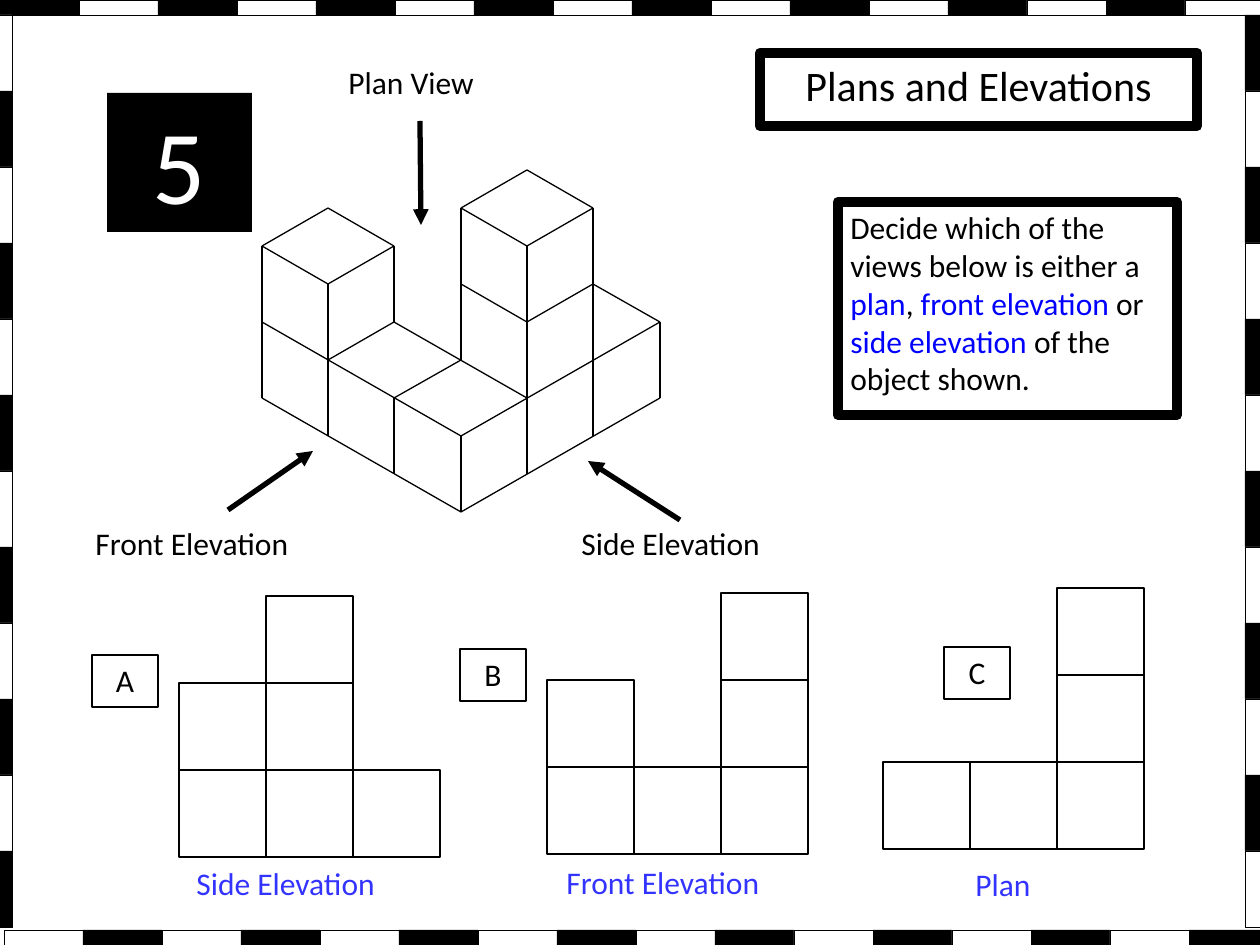
"""Builds a worksheet slide on plans and elevations of a solid made of cubes."""
import lxml.etree
import pptx
import pptx.dml.color
import pptx.enum.shapes
import pptx.enum.text
import pptx.oxml.ns
import pptx.util

SCALE = 914400 / 126
BLACK, WHITE, BLUE, ANSWER = "000000", "FFFFFF", "0000FF", "3333FF"
ALIGN = pptx.enum.text.PP_ALIGN
RECTANGLE = pptx.enum.shapes.MSO_SHAPE.RECTANGLE
STRAIGHT = pptx.enum.shapes.MSO_CONNECTOR.STRAIGHT
SQUARE = 87

FRAME_FORMAT = {
    "word_wrap": True,
    "auto_size": pptx.enum.text.MSO_AUTO_SIZE.NONE,
    "vertical_anchor": pptx.enum.text.MSO_ANCHOR.TOP,
}

LABELS = [
    ("Plan View", 336, 57, 176, BLACK),
    ("Front Elevation", 83, 518, 246, BLACK),
    ("Side Elevation", 569, 518, 246, BLACK),
    ("Side Elevation", 184, 858, 281, ANSWER),
    ("Front Elevation", 554, 857, 281, ANSWER),
    ("Plan", 963, 859, 145, ANSWER),
]
ARROWS = [(228, 510, 313, 451), (680, 520, 588, 461), (420, 121, 421, 225)]

# Cube edges as (column, row) to (column, row) on the isometric grid
EDGES = [
    (3, 9, 6, 6), (3, 9, 0, 6), (3, 9, 3, 7), (3, 7, 6, 4), (3, 7, 0, 4),
    (1, 7, 1, 3), (2, 8, 2, 6), (4, 6, 2, 4), (1, 5, 2, 4), (2, 6, 3, 5),
    (3, 5, 3, 1), (4, 4, 5, 3), (4, 4, 3, 3), (4, 8, 4, 2), (5, 7, 5, 1),
    (3, 1, 4, 2), (4, 2, 5, 1), (4, 0, 5, 1), (3, 1, 4, 0), (0, 2, 0, 6),
    (2, 4, 2, 2), (1, 3, 2, 2), (1, 3, 0, 2), (0, 2, 1, 1), (1, 1, 2, 2),
    (6, 4, 6, 6), (6, 4, 5, 3),
]

# Letter, its box corner, corner of the bottom left square, column heights
VIEWS = [
    ("A", 92, 655, 179, 770, (2, 3, 1)),
    ("B", 460, 649, 547, 767, (2, 1, 3)),
    ("C", 944, 647, 883, 762, (1, 1, 3)),
]

# Corner, step, tile size, tile count, fills in order
BORDERS = [
    (0, 0, 79, 0, 79, 15, 16, (BLACK, WHITE)),
    (4, 930, 79, 0, 79, 15, 16, (WHITE, BLACK)),
    (1245, 15, 0, 76, 15, 76, 12, (BLACK, WHITE)),
    (-4, 15, 0, 76, 16, 76, 12, (WHITE, BLACK)),
]

TASK = [
    ("Decide which of the views below is either a ", BLACK),
    ("plan", BLUE), (", ", BLACK), ("front elevation", BLUE),
    (" or ", BLACK), ("side elevation", BLUE),
    (" of the object shown.", BLACK),
]


def px(length):
    """Turns px into EMU."""
    return pptx.util.Emu(round(length * SCALE))


def rgb(colour):
    """Turns a hex string into a colour."""
    return pptx.dml.color.RGBColor.from_string(colour)


def set_values(target, values):
    """Sets each named attribute of the target."""
    for name, value in values.items():
        setattr(target, name, value)


def write(shape, spans, size, align=ALIGN.LEFT):
    """Writes coloured spans as the one paragraph of a shape."""
    set_values(shape.text_frame, FRAME_FORMAT)
    para = shape.text_frame.paragraphs[0]
    para.alignment = align
    for text, colour in spans:
        span = para.add_run()
        span.text = text
        set_values(span.font, {"name": "Calibri", "size": pptx.util.Pt(size)})
        span.font.color.rgb = rgb(colour)


def outline(shape, weight):
    """Gives a shape or line a black stroke."""
    shape.line.color.rgb = rgb(BLACK)
    shape.line.width = pptx.util.Pt(weight)


def add_box(page, left, top, width, height, weight=0.75, fill=None):
    """Adds a rectangle with a black outline, hollow unless a fill is given."""
    box = page.shapes.add_shape(RECTANGLE, px(left), px(top), px(width), px(height))
    box.shadow.inherit = False
    if fill:
        box.fill.solid()
        box.fill.fore_color.rgb = rgb(fill)
    else:
        box.fill.background()
    if weight:
        outline(box, weight)
    else:
        box.line.fill.background()
    return box


def add_line(page, ends, weight, arrow=False):
    """Adds a straight line, with an arrowhead at its end if asked."""
    line = page.shapes.add_connector(STRAIGHT, *map(px, ends))
    outline(line, weight)
    qn = pptx.oxml.ns.qn
    if arrow:
        lxml.etree.SubElement(line.line._get_or_add_ln(), qn("a:tailEnd"), type="triangle")
    lxml.etree.SubElement(line._element.spPr, qn("a:effectLst"))


def add_label(page, text, left, top, width, colour):
    """Adds a single line of plain text."""
    box = page.shapes.add_textbox(px(left), px(top), px(width), px(50))
    write(box, [(text, colour)], 18)


def add_border(page, left, top, across, down, width, height, count, fills):
    """Adds a row or column of tiles in alternating fills."""
    for index in range(count):
        add_box(page, left + across * index, top + down * index,
                width, height, 0.25, fills[index % 2])


def add_title(page):
    """Places and frames the title."""
    title = page.shapes.title
    places = {"left": 760, "top": 53, "width": 437, "height": 73}
    set_values(title, {name: px(length) for name, length in places.items()})
    outline(title, 6)
    write(title, [("Plans and Elevations", BLACK)], 24, ALIGN.CENTER)


def add_solid(page):
    """Draws the solid from its edges on the isometric grid."""
    for start_column, start_row, end_column, end_row in EDGES:
        ends = (262 + 398 * start_column // 6, 170 + 38 * start_row,
                262 + 398 * end_column // 6, 170 + 38 * end_row)
        add_line(page, ends, 0.75)


def add_view(page, letter, box_left, box_top, left, base, heights):
    """Adds a lettered view made of stacked squares."""
    for column, height in enumerate(heights):
        for level in range(height):
            add_box(page, left + column * SQUARE, base - level * SQUARE, SQUARE, SQUARE)
    write(add_box(page, box_left, box_top, 66, 52), [(letter, BLACK)], 18, ALIGN.CENTER)


def main():
    """Builds and saves the deck."""
    deck = pptx.Presentation()
    set_values(deck, {"slide_width": px(1260), "slide_height": px(945)})
    page = deck.slides.add_slide(deck.slide_layouts[5])
    for border in BORDERS:
        add_border(page, *border)
    add_title(page)
    for label in LABELS:
        add_label(page, *label)
    for ends in ARROWS:
        add_line(page, ends, 3, arrow=True)
    add_solid(page)
    for view in VIEWS:
        add_view(page, *view)
    write(add_box(page, 838, 202, 339, 213, 6), TASK, 18)
    number = add_box(page, 107, 93, 145, 139, 0, BLACK)
    write(number, [("5", WHITE)], 60, ALIGN.CENTER)
    deck.save("out.pptx")


if __name__ == "__main__":
    main()
